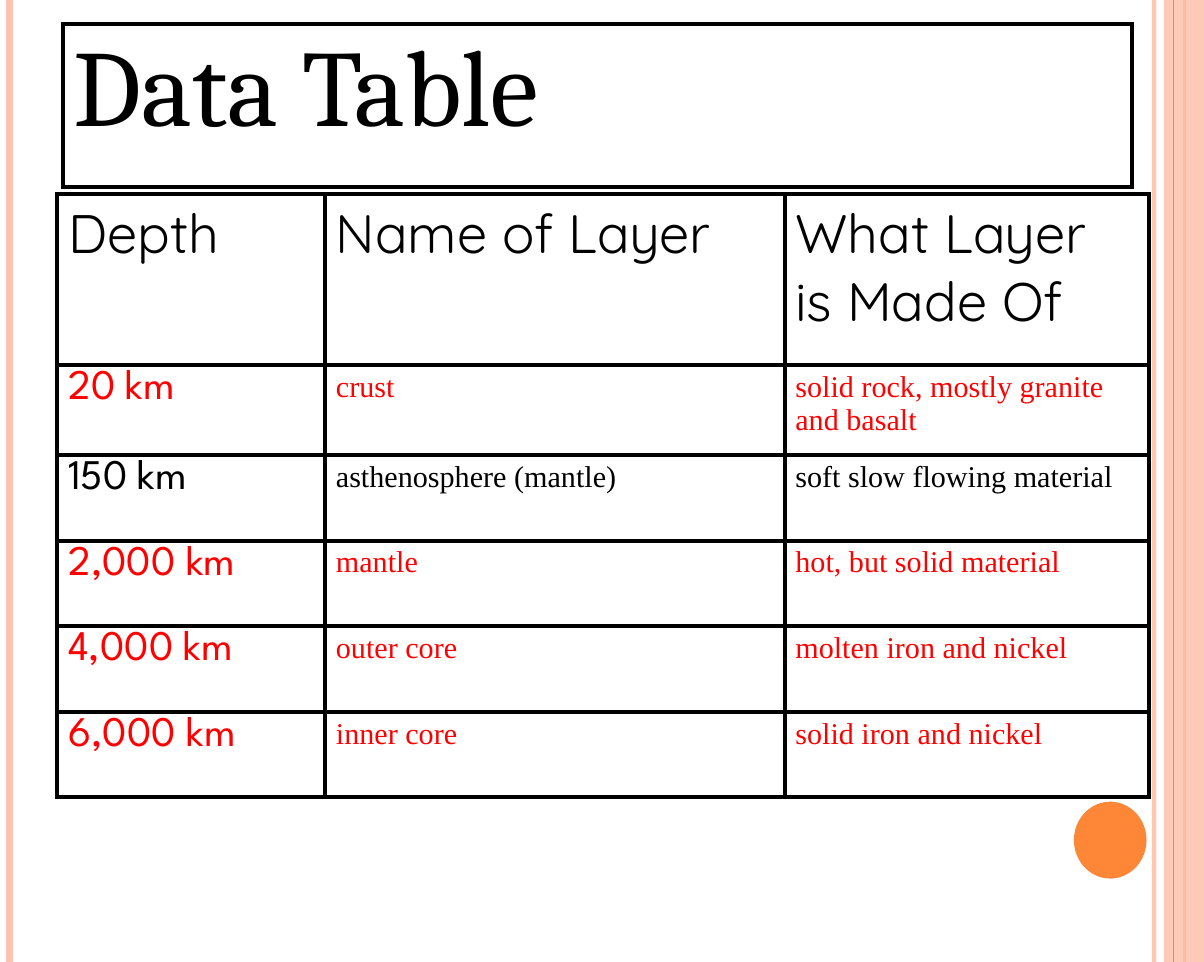
"""Builds a slide with a table of the Earth's layers."""
from lxml.etree import SubElement
from pptx import Presentation
from pptx.dml.color import RGBColor
from pptx.enum.shapes import MSO_CONNECTOR as Connector, MSO_SHAPE as Shape
from pptx.oxml.ns import qn
from pptx.util import Inches, Pt

BLACK = RGBColor(0x00, 0x00, 0x00)
WHITE = RGBColor(0xFF, 0xFF, 0xFF)
RED = RGBColor(0xFF, 0x00, 0x00)
PEACH = RGBColor(0xFE, 0xC3, 0xAE)
ORANGE = RGBColor(0xFE, 0x86, 0x37)

WIDTH, HEIGHT = 11.11, 8.88
TITLE_FONT = ("Cambria", 72)
HEADER_FONT = ("Quicksand", 36)
DEPTH_FONT = ("League Spartan", 28)
DETAIL_FONT = ("Times New Roman", 20)

HEADINGS = ["Depth", "Name of Layer", "What Layer is Made Of"]
LAYERS = [
    ("20 km", "crust", "solid rock, mostly granite and basalt", RED),
    ("150 km", "asthenosphere (mantle)", "soft slow flowing material", BLACK),
    ("2,000 km", "mantle", "hot, but solid material", RED),
    ("4,000 km", "outer core", "molten iron and nickel", RED),
    ("6,000 km", "inner core", "solid iron and nickel", RED),
]


def set_opacity(fill_parent, percent):
    """Make the solid colour below an element partly transparent."""
    color = next(fill_parent.iter(qn("a:srgbClr")))
    SubElement(color, qn("a:alpha"), val=str(percent * 1000))


def add_stripe(slide, x, color, weight, opacity=100):
    """Draw a vertical line over the full slide height."""
    stripe = slide.shapes.add_connector(
        Connector.STRAIGHT, Inches(x), 0, Inches(x), Inches(HEIGHT))
    stripe.line.color.rgb = color
    stripe.line.width = Pt(weight)
    properties = stripe.line._get_or_add_ln().getparent()
    if opacity < 100:
        set_opacity(properties, opacity)
    SubElement(properties, qn("a:effectLst"))


def add_ornament(slide, preset, box, color):
    """Add a plain filled shape without outline."""
    ornament = slide.shapes.add_shape(preset, *map(Inches, box))
    ornament.shadow.inherit = False
    ornament.fill.solid()
    ornament.fill.fore_color.rgb = color
    ornament.line.fill.background()
    return ornament


def add_borders(cell):
    """Put a black three-point border on each side of a cell."""
    properties = cell._tc.get_or_add_tcPr()
    for index, side in enumerate(("lnL", "lnR", "lnT", "lnB")):
        border = properties.makeelement(qn(f"a:{side}"), w=str(Pt(3)))
        fill = SubElement(border, qn("a:solidFill"))
        SubElement(fill, qn("a:srgbClr"), val=str(BLACK))
        properties.insert(index, border)


def fill_cell(cell, text, font, color):
    """Write one run into a white bordered cell."""
    cell.fill.solid()
    cell.fill.fore_color.rgb = WHITE
    add_borders(cell)
    run = cell.text_frame.paragraphs[0].add_run()
    run.text = text
    run.font.name, size = font
    run.font.size = Pt(size)
    run.font.color.rgb = color


def add_grid(slide, left, top, widths, heights, rows):
    """Add a table from rows of (text, font, color) entries."""
    grid = slide.shapes.add_table(
        len(heights), len(widths), Inches(left), Inches(top),
        Inches(sum(widths)), Inches(sum(heights))).table
    grid.first_row = False
    grid.horz_banding = False
    for column, width in zip(grid.columns, widths):
        column.width = Inches(width)
    for row, height, entries in zip(grid.rows, heights, rows):
        row.height = Inches(height)
        for cell, entry in zip(row.cells, entries):
            fill_cell(cell, *entry)


def add_decoration(slide):
    """Draw the stripes, the side band and the dot."""
    add_stripe(slide, 10.65, PEACH, 3, opacity=93)
    add_stripe(slide, 0.09, PEACH, 4.5)
    add_stripe(slide, 10.93, ORANGE, 1.5)
    band = add_ornament(slide, Shape.RECTANGLE, (10.74, 0, 0.37, HEIGHT), PEACH)
    set_opacity(band.fill._xPr, 87)
    add_stripe(slide, 10.83, ORANGE, 0.75)
    add_ornament(slide, Shape.OVAL, (9.91, 7.4, 0.67, 0.71), ORANGE)


def main():
    """Build and save the slide."""
    deck = Presentation()
    deck.slide_width, deck.slide_height = Inches(WIDTH), Inches(HEIGHT)
    slide = deck.slides.add_slide(deck.slide_layouts[6])
    add_decoration(slide)

    layer_rows = [[(heading, HEADER_FONT, BLACK) for heading in HEADINGS]]
    for depth, name, material, color in LAYERS:
        layer_rows.append([(depth, DEPTH_FONT, color),
                           (name, DETAIL_FONT, color),
                           (material, DETAIL_FONT, color)])
    add_grid(slide, 0.53, 1.79, [2.47, 4.24, 3.36],
             [1.58, 0.83] + [0.79] * 4, layer_rows)
    add_grid(slide, 0.58, 0.22, [9.87], [1.51],
             [[("Data Table", TITLE_FONT, BLACK)]])
    deck.save("out.pptx")


if __name__ == "__main__":
    main()
